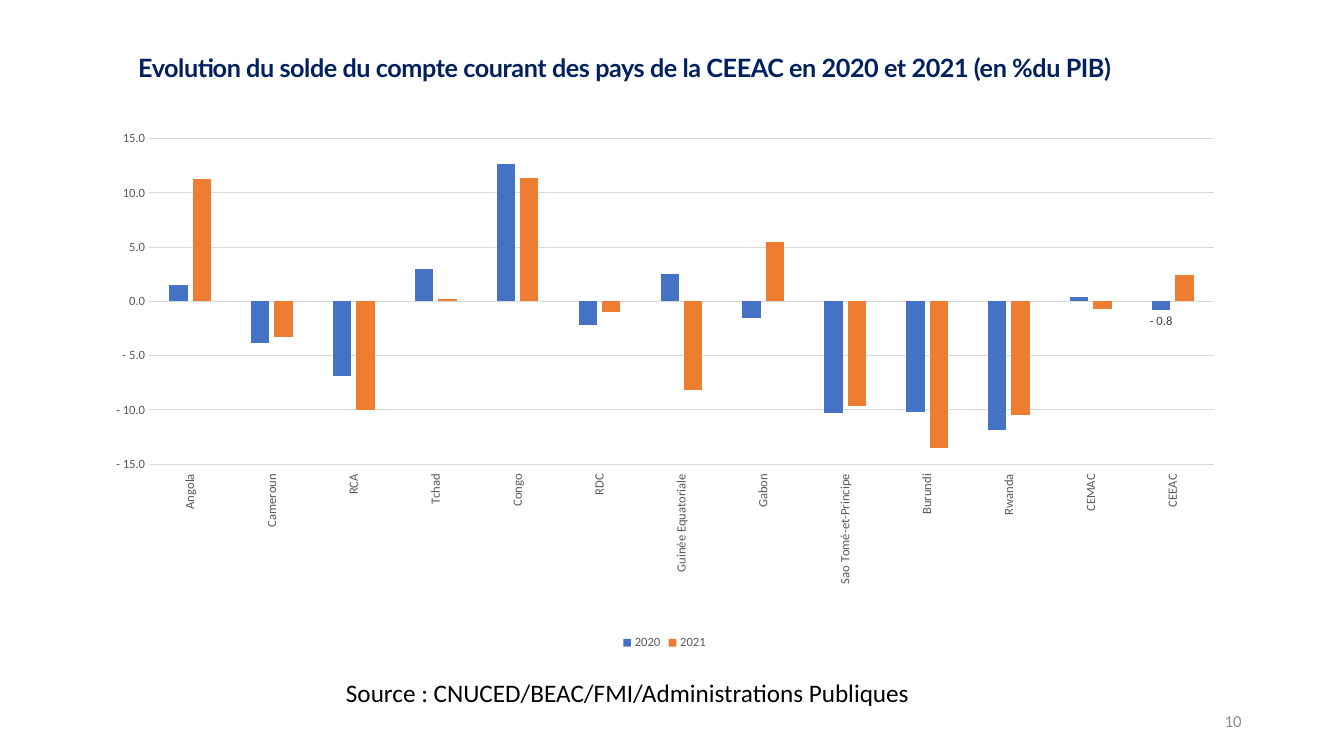
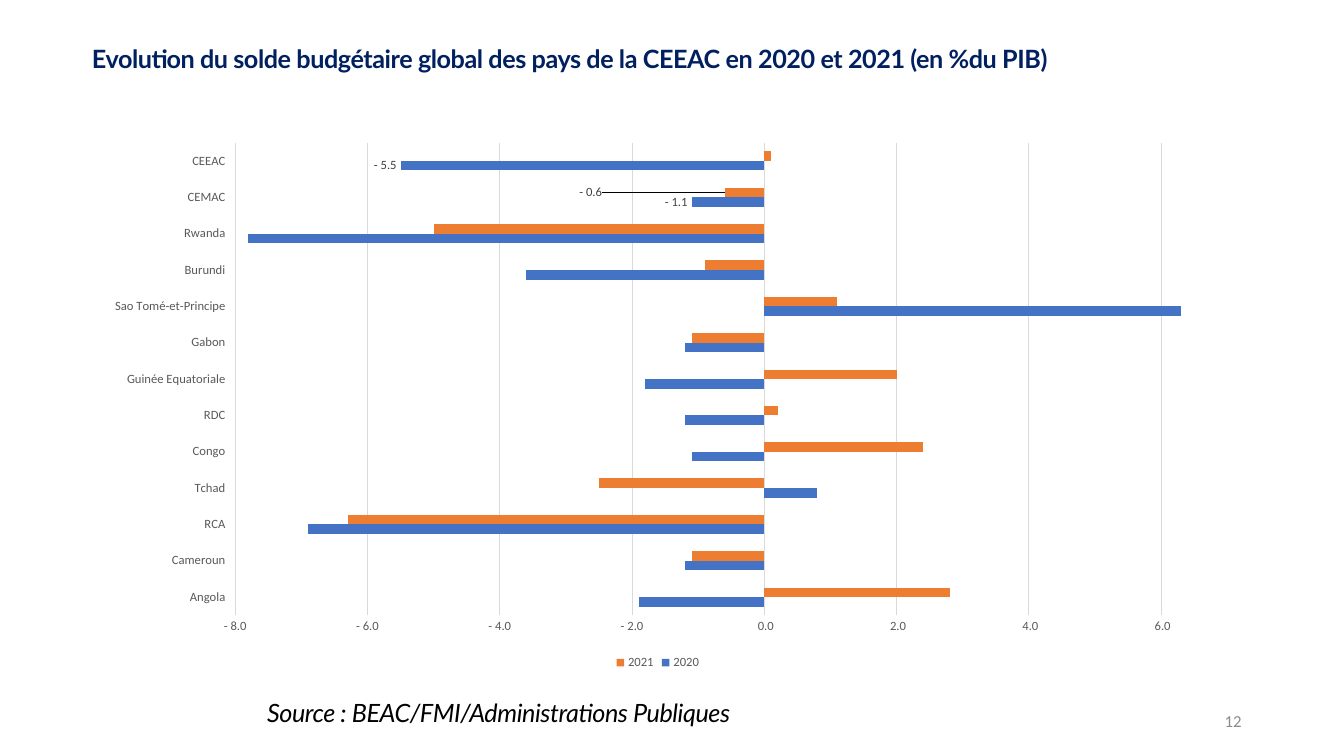
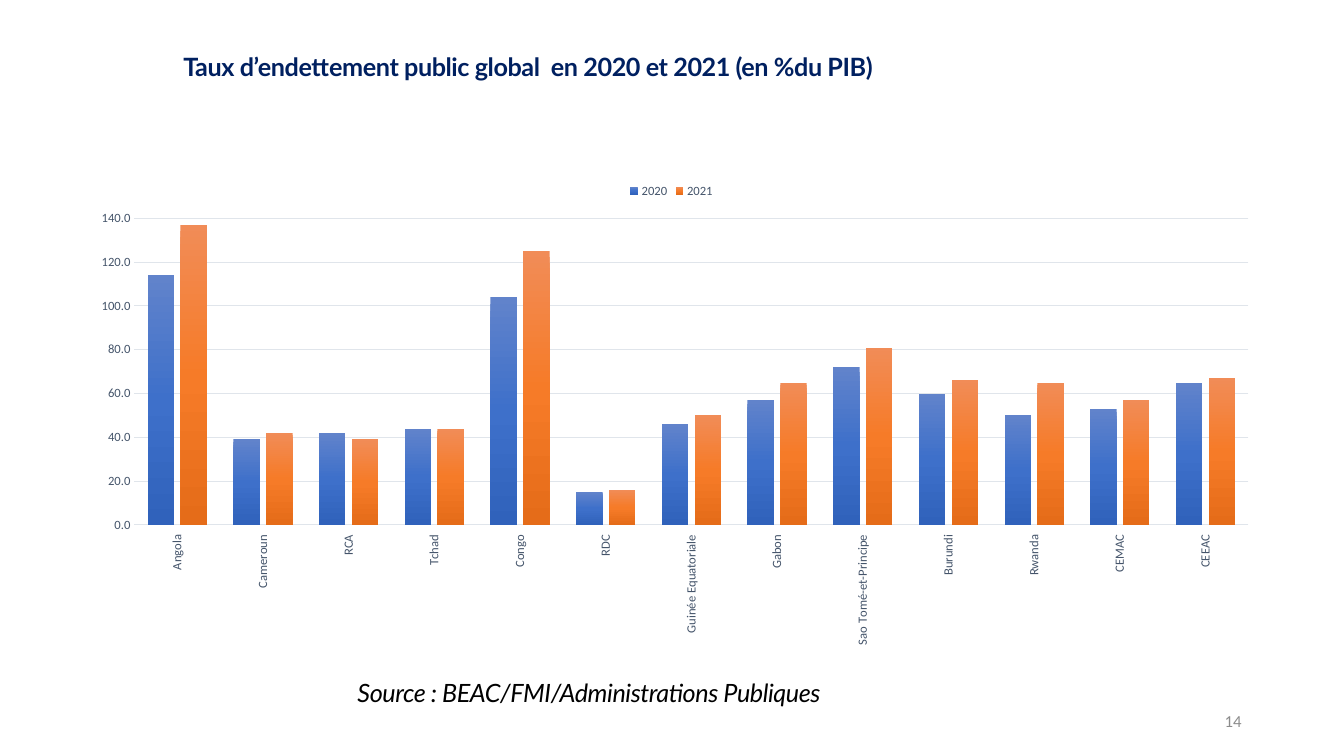
from copy import deepcopy
from dataclasses import dataclass

from lxml.etree import SubElement
from pptx import Presentation
from pptx.chart.data import CategoryChartData
from pptx.dml.color import RGBColor
from pptx.enum.chart import XL_CHART_TYPE, XL_LABEL_POSITION, XL_LEGEND_POSITION
from pptx.enum.chart import XL_TICK_LABEL_POSITION, XL_TICK_MARK
from pptx.enum.text import MSO_ANCHOR, MSO_AUTO_SIZE, PP_ALIGN
from pptx.oxml import parse_xml
from pptx.oxml.ns import qn
from pptx.util import Pt

EMU_PER_PX = 9525


def px(length):
    return length * EMU_PER_PX


@dataclass(frozen=True)
class TextStyle:
    font: str
    size: int
    color: str
    bold: bool = False
    italic: bool = False
    tracking: int = 0
    spaced: bool = False
    first_indent: int = 0
    align: PP_ALIGN = PP_ALIGN.LEFT
    anchor: MSO_ANCHOR = MSO_ANCHOR.TOP
    auto_size: MSO_AUTO_SIZE = MSO_AUTO_SIZE.SHAPE_TO_FIT_TEXT


@dataclass(frozen=True)
class ChartColors:
    text: str
    grid: str
    series: tuple


class Theme:
    chart_font = "Calibri"
    chart_size = 10
    axis_size = 9
    line_width = 0.75
    ink = "000000"
    label_ink = "404040"
    value_format = "#\\ ##0.0"
    title = TextStyle("Lato", 18, "002060", bold=True, tracking=-30, spaced=True)
    source = TextStyle("Calibri", 18, ink)
    source_italic = TextStyle("Lato", 18, ink, italic=True, tracking=-30)
    source_indented = TextStyle("Lato", 18, ink, italic=True, tracking=-30,
                                spaced=True, first_indent=48)
    number = TextStyle("Calibri", 12, "8C8C8C", align=PP_ALIGN.RIGHT,
                       anchor=MSO_ANCHOR.MIDDLE, auto_size=MSO_AUTO_SIZE.NONE)
    flat = ChartColors("595959", "D9D9D9", (("4472C4",), ("ED7D31",)))
    shaded = ChartColors("44546A", "E0E5EB", (("6183CB", "3E70CA", "3062BB"),
                                              ("F18C57", "F67B28", "E56C19")))


@dataclass(frozen=True)
class ChartLook:
    kind: XL_CHART_TYPE
    colors: ChartColors
    plot_box: tuple
    scale: tuple
    gap: int
    overlap: int = 0
    legend: XL_LEGEND_POSITION = XL_LEGEND_POSITION.BOTTOM
    labels: tuple = ()


NUMBER_BOX = (904, 667, 288, 38)
COUNTRIES = ("Angola", "Cameroun", "RCA", "Tchad", "Congo", "RDC", "Guinée Equatoriale",
             "Gabon", "Sao Tomé-et-Principe", "Burundi", "Rwanda", "CEMAC", "CEEAC")
YEARS = ("2020", "2021")


def place(shape, box):
    shape.left, shape.top, shape.width, shape.height = map(px, box)


def write_text(shape, text, style):
    frame = shape.text_frame
    frame.word_wrap = True
    frame.auto_size = style.auto_size
    frame.vertical_anchor = style.anchor
    frame.margin_left = frame.margin_right = Pt(7.2)
    frame.margin_top = frame.margin_bottom = Pt(3.6)
    paragraph = frame.paragraphs[0]
    paragraph.alignment = style.align
    if style.spaced:
        paragraph.line_spacing = 1.15
        paragraph.space_before = paragraph.space_after = Pt(6)
    if style.first_indent:
        paragraph._p.get_or_add_pPr().set("indent", str(px(style.first_indent)))
    run = paragraph.add_run()
    run.text = text
    style_font(run.font, style.font, style.size, style.color)
    run.font.bold = style.bold
    run.font.italic = style.italic
    if style.tracking:
        run._r.get_or_add_rPr().set("spc", str(style.tracking))


def style_font(font, name, size, color):
    font.name = name
    font.size = Pt(size)
    font.color.rgb = RGBColor.from_string(color)


def add_text(slide, box, text, style):
    write_text(slide.shapes.add_textbox(*map(px, box)), text, style)


def add_title(slide, box, text):
    place(slide.shapes.title, box)
    write_text(slide.shapes.title, text, Theme.title)


def style_line(line, color):
    line.color.rgb = RGBColor.from_string(color)
    line.width = Pt(Theme.line_width)


def fill_series(series, colors):
    series.invert_if_negative = False
    series.smooth = False if hasattr(series, "smooth") else None
    fill = series.format.fill
    if len(colors) == 1:
        fill.solid()
        fill.fore_color.rgb = RGBColor.from_string(colors[0])
        return
    fill.gradient()
    fill.gradient_angle = 270
    stop_list = series._element.xpath("c:spPr/a:gradFill/a:gsLst")[0]
    stop_list.insert(1, deepcopy(stop_list[0]))
    for index, (stop, color) in enumerate(zip(fill.gradient_stops, colors)):
        stop.position = index / (len(colors) - 1)
        stop.color.rgb = RGBColor.from_string(color)


def add_manual_layout(parent, index, settings):
    for old in parent.findall(qn("c:layout")):
        parent.remove(old)
    layout = parent.makeelement(qn("c:layout"))
    parent.insert(index, layout)
    manual = SubElement(layout, qn("c:manualLayout"))
    for name, value in settings:
        SubElement(manual, qn(f"c:{name}")).set("val", str(value))


def fix_plot_area(chart, box, plot_box):
    left, top, width, height = plot_box
    add_manual_layout(chart._chartSpace.xpath("c:chart/c:plotArea")[0], 0, (
        ("layoutTarget", "inner"), ("xMode", "edge"), ("yMode", "edge"),
        ("x", left / box[2]), ("y", top / box[3]),
        ("w", width / box[2]), ("h", height / box[3])))


def label_point(series, point, shift):
    labels = series.data_labels
    labels.show_value = False
    label = series.points[point].data_label
    label.position = XL_LABEL_POSITION.OUTSIDE_END
    style_font(label.font, Theme.chart_font, Theme.axis_size, Theme.label_ink)
    if shift:
        element = labels._element.xpath(f"c:dLbl[c:idx/@val='{point}']")[0]
        add_manual_layout(element, 1, (("x", shift), ("y", 0)))
        labels._element.append(parse_xml(
            '<c:extLst xmlns:c="http://schemas.openxmlformats.org/drawingml/2006/chart">'
            '<c:ext uri="{CE6537A1-D6FC-4f65-9D91-7224C49458BB}" '
            'xmlns:c15="http://schemas.microsoft.com/office/drawing/2012/chart">'
            '<c15:showLeaderLines val="1"/></c:ext></c:extLst>'))


def style_axes(chart, look):
    category, value = chart.category_axis, chart.value_axis
    for axis in (category, value):
        axis.major_tick_mark = axis.minor_tick_mark = XL_TICK_MARK.NONE
        style_font(axis.tick_labels.font, Theme.chart_font, Theme.axis_size, look.colors.text)
    category.has_major_gridlines = False
    category.tick_label_position = XL_TICK_LABEL_POSITION.LOW
    style_line(category.format.line, look.colors.grid)
    if look.kind == XL_CHART_TYPE.COLUMN_CLUSTERED:
        category._element.xpath("c:txPr/a:bodyPr")[0].set("rot", "-5400000")
    value.minimum_scale, value.maximum_scale, value.major_unit = look.scale
    value.has_major_gridlines = True
    style_line(value.major_gridlines.format.line, look.colors.grid)
    value.format.line.fill.background()
    value.tick_labels.number_format = Theme.value_format
    value.tick_labels.number_format_is_linked = False


def add_year_chart(slide, box, values, look):
    data = CategoryChartData(number_format=Theme.value_format)
    data.categories = COUNTRIES
    for year, numbers in zip(YEARS, values):
        data.add_series(year, numbers)
    chart = slide.shapes.add_chart(look.kind, *map(px, box), data).chart
    style_font(chart.font, Theme.chart_font, Theme.chart_size, Theme.ink)
    chart.has_title = False
    chart.has_legend = True
    chart.legend.position = look.legend
    chart.legend.include_in_layout = False
    style_font(chart.legend.font, Theme.chart_font, Theme.axis_size, look.colors.text)
    style_axes(chart, look)
    plot = chart.plots[0]
    plot.vary_by_categories = False
    plot.gap_width = look.gap
    plot.overlap = look.overlap
    for series, colors in zip(plot.series, look.colors.series):
        fill_series(series, colors)
    for series_index, point, shift in look.labels:
        label_point(plot.series[series_index], point, shift)
    fix_plot_area(chart, box, look.plot_box)


def add_chart_slide(presentation, number, title, chart, source):
    slide = presentation.slides.add_slide(presentation.slide_layouts[5])
    add_title(slide, *title)
    add_year_chart(slide, *chart)
    add_text(slide, *source)
    add_text(slide, NUMBER_BOX, number, Theme.number)


CURRENT_ACCOUNT = (
    (1.5, -3.8, -6.9, 3.0, 12.7, -2.2, 2.5, -1.5, -10.3, -10.2, -11.9, 0.4, -0.8),
    (11.3, -3.3, -10, 0.2, 11.4, -1, -8.2, 5.5, -9.7, -13.5, -10.5, -0.7, 2.4))
BUDGET_BALANCE = (
    (-1.9, -1.2, -6.9, 0.8, -1.1, -1.2, -1.8, -1.2, 6.3, -3.6, -7.8, -1.1, -5.5),
    (2.8, -1.1, -6.3, -2.5, 2.4, 0.2, 2.0, -1.1, 1.1, -0.9, -5.0, -0.6, 0.1))
PUBLIC_DEBT = (
    (114, 39, 42, 44, 104, 15, 46, 57, 72, 60, 50, 53, 65),
    (137, 42, 39, 44, 125, 16, 50, 65, 81, 66, 65, 57, 67))

CURRENT_ACCOUNT_LOOK = ChartLook(
    XL_CHART_TYPE.COLUMN_CLUSTERED, Theme.flat, plot_box=(54, 17, 1014, 310),
    scale=(-15, 15, 5), gap=219, overlap=-27, labels=((0, 12, 0),))
BUDGET_BALANCE_LOOK = ChartLook(
    XL_CHART_TYPE.BAR_CLUSTERED, Theme.flat, plot_box=(163, 10, 945, 450),
    scale=(-8, 7, 2), gap=182, labels=((0, 11, 0), (0, 12, 0), (1, 11, -0.1)))
PUBLIC_DEBT_LOOK = ChartLook(
    XL_CHART_TYPE.COLUMN_CLUSTERED, Theme.shaded, plot_box=(61, 44, 1061, 292),
    scale=(0, 140, 20), gap=100, overlap=-24, legend=XL_LEGEND_POSITION.TOP)


def main():
    presentation = Presentation()
    presentation.slide_width, presentation.slide_height = px(1280), px(720)
    add_chart_slide(
        presentation, "10",
        ((122, 41, 1007, 41),
         "Evolution du solde du compte courant des pays de la CEEAC en 2020 et 2021 (en %du PIB)"),
        ((88, 115, 1090, 508), CURRENT_ACCOUNT, CURRENT_ACCOUNT_LOOK),
        ((320, 640, 640, 38), "Source : CNUCED/BEAC/FMI/Administrations Publiques",
         Theme.source))
    add_chart_slide(
        presentation, "12",
        ((78, 32, 1037, 41),
         "Evolution du solde budgétaire global des pays de la CEEAC en 2020 et 2021 (en %du PIB)"),
        ((61, 126, 1131, 516), BUDGET_BALANCE, BUDGET_BALANCE_LOOK),
        ((197, 655, 750, 41), "Source : BEAC/FMI/Administrations Publiques",
         Theme.source_indented))
    add_chart_slide(
        presentation, "14",
        ((165, 40, 806, 41), "Taux d’endettement public global  en 2020 et 2021 (en %du PIB)"),
        ((67, 164, 1145, 489), PUBLIC_DEBT, PUBLIC_DEBT_LOOK),
        ((331, 640, 640, 38), "Source : BEAC/FMI/Administrations Publiques",
         Theme.source_italic))
    presentation.save("out.pptx")


if __name__ == "__main__":
    main()
